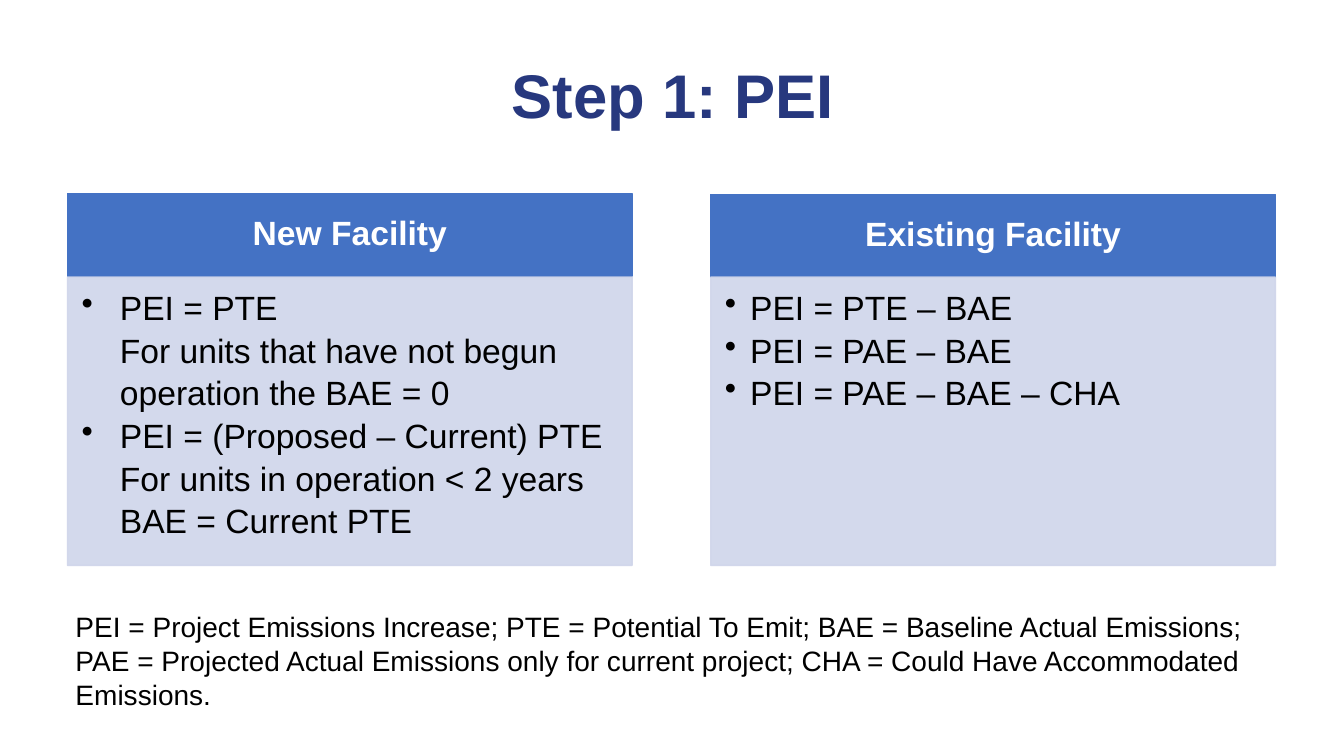
import pptx
import pptx.util
import pptx.dml.color
import pptx.enum.shapes
import pptx.enum.text
import lxml.etree

TITLE = "Step 1: PEI"
FACILITIES = [
    {"heading": "New Facility", "left": 67, "top": 192, "hanging": 38, "lines": [
        (True, "PEI = PTE"),
        (False, "For units that have not begun"),
        (False, "operation the BAE = 0"),
        (True, "PEI = (Proposed – Current) PTE"),
        (False, "For units in operation < 2 years"),
        (False, "BAE = Current PTE"),
    ]},
    {"heading": "Existing Facility", "left": 705, "top": 193, "hanging": 25, "lines": [
        (True, "PEI = PTE – BAE"),
        (True, "PEI = PAE – BAE"),
        (True, "PEI = PAE – BAE – CHA"),
    ]},
]
DEFINITIONS = [
    "PEI = Project Emissions Increase; PTE = Potential To Emit; BAE = Baseline Actual Emissions;",
    "PAE = Projected Actual Emissions only for current project; "
    "CHA = Could Have Accommodated Emissions.",
]

NAVY, BLUE, PALE, WHITE, BLACK = "27387E", "4472C4", "CFD5EA", "FFFFFF", "000000"
COLUMN_WIDTH, HEADING_HEIGHT, BODY_TOP, BODY_HEIGHT = 560, 82, 275, 286
ANCHOR = pptx.enum.text.MSO_ANCHOR
CENTER = pptx.enum.text.PP_ALIGN.CENTER


def px(length):
    return pptx.util.Emu(length * 9144)


def color(value):
    return pptx.dml.color.RGBColor.from_string(value)


def prepare_frame(shape, margins, anchor=ANCHOR.TOP):
    frame = shape.text_frame
    frame.word_wrap = True
    frame.vertical_anchor = anchor
    frame.margin_left, frame.margin_top, frame.margin_right, frame.margin_bottom = map(px, margins)
    return frame


def add_paragraph(frame, text, size, text_color, bold=False, align=pptx.enum.text.PP_ALIGN.LEFT,
                  spacing=0.9, after=0, level=0, margin=0, indent=0, bullet=False):
    first = frame.paragraphs[0]
    paragraph = frame.add_paragraph() if first.runs else first
    properties = paragraph._p.get_or_add_pPr()
    properties.set("marL", str(px(margin)))
    properties.set("indent", str(px(indent)))
    if bullet:
        mark = lxml.etree.SubElement(properties, pptx.oxml.ns.qn("a:buChar"))
        mark.set("char", "•")
    paragraph.level = level
    paragraph.alignment = align
    paragraph.line_spacing = spacing
    paragraph.space_after = pptx.util.Pt(after)
    run = paragraph.add_run()
    run.text = text
    run.font.name = "Arial"
    run.font.size = pptx.util.Pt(size)
    run.font.bold = bold
    run.font.color.rgb = color(text_color)


def add_panel(slide, left, top, height, fill, opacity=100):
    shape = slide.shapes.add_shape(pptx.enum.shapes.MSO_SHAPE.RECTANGLE,
                                   px(left), px(top), px(COLUMN_WIDTH), px(height))
    shape.shadow.inherit = False
    shape.fill.solid()
    shape.fill.fore_color.rgb = color(fill)
    shape.line.color.rgb = color(fill)
    shape.line.width = pptx.util.Pt(1)
    if opacity < 100:
        for value in shape._element.spPr.iter(pptx.oxml.ns.qn("a:srgbClr")):
            alpha = lxml.etree.SubElement(value, pptx.oxml.ns.qn("a:alpha"))
            alpha.set("val", str(opacity * 1000))
    return shape


def add_facility(slide, facility):
    left = facility["left"]
    heading = add_panel(slide, left, facility["top"], HEADING_HEIGHT, BLUE)
    frame = prepare_frame(heading, (19, 11, 19, 11), ANCHOR.MIDDLE)
    add_paragraph(frame, facility["heading"], 24, WHITE, bold=True, align=CENTER)

    body = add_panel(slide, left, BODY_TOP, BODY_HEIGHT, PALE, opacity=90)
    frame = prepare_frame(body, (14, 14, 19, 21))
    hanging = facility["hanging"]
    for bullet, text in facility["lines"]:
        add_paragraph(frame, text, 24, BLACK, after=4.6, level=1, margin=hanging,
                      indent=-hanging if bullet else 0, bullet=bullet)


def main():
    presentation = pptx.Presentation()
    presentation.slide_width, presentation.slide_height = px(1333), px(750)
    slide = presentation.slides.add_slide(presentation.slide_layouts[6])

    title = slide.shapes.add_textbox(px(68), px(60), px(1199), px(145))
    add_paragraph(prepare_frame(title, (10, 5, 10, 5)), TITLE, 44, NAVY, bold=True, align=CENTER)

    for facility in FACILITIES:
        add_facility(slide, facility)

    definitions = slide.shapes.add_textbox(px(15), px(600), px(1252), px(111))
    frame = prepare_frame(definitions, (10, 5, 10, 5))
    frame.auto_size = pptx.enum.text.MSO_AUTO_SIZE.SHAPE_TO_FIT_TEXT
    for text in DEFINITIONS:
        add_paragraph(frame, text, 20, BLACK, spacing=1.0, level=1, margin=50)

    presentation.save("out.pptx")


if __name__ == "__main__":
    main()
